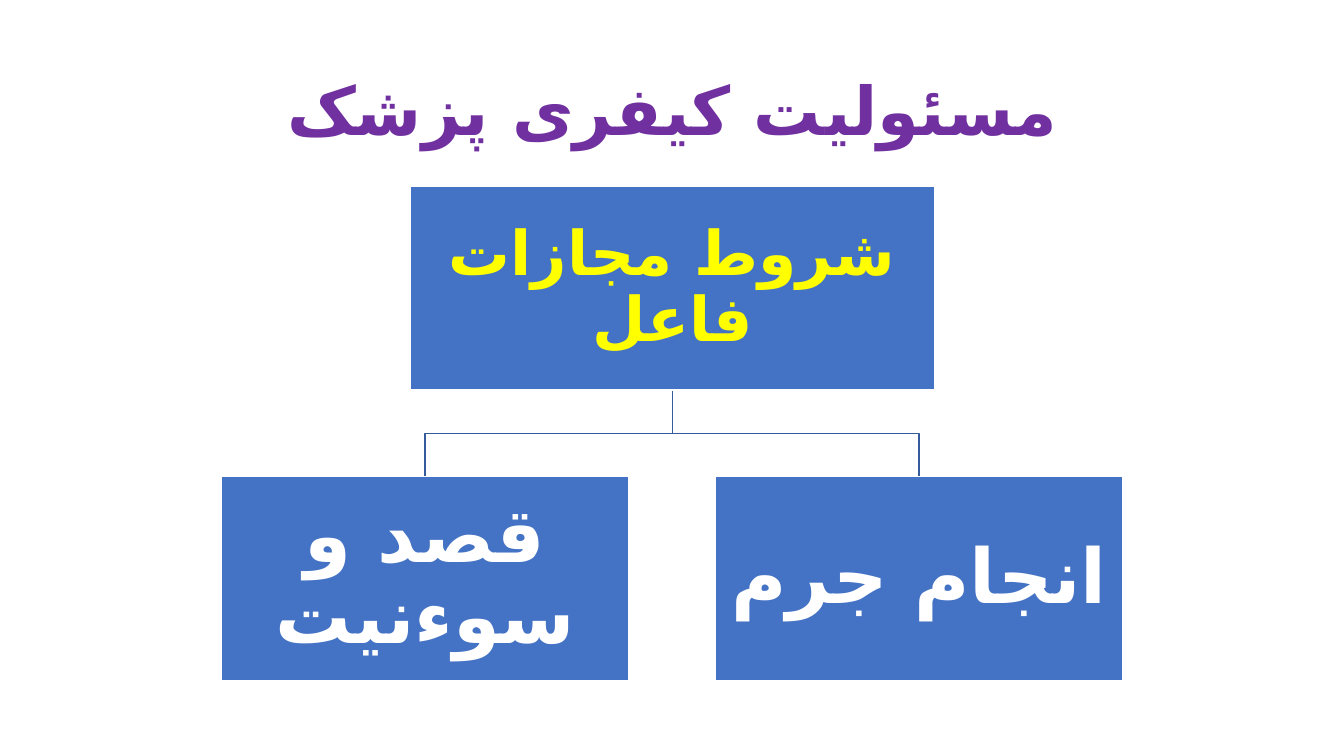
"""Build a slide with a two-branch hierarchy on a physician's criminal liability."""
from dataclasses import dataclass

from lxml import etree
from pptx import Presentation
from pptx.dml.color import RGBColor
from pptx.enum.shapes import MSO_SHAPE
from pptx.enum.text import MSO_ANCHOR, PP_ALIGN
from pptx.oxml.ns import qn
from pptx.util import Inches, Pt

RECTANGLE = MSO_SHAPE.RECTANGLE
MIDDLE = MSO_ANCHOR.MIDDLE
CENTER = PP_ALIGN.CENTER

FONT, PERSIAN_FONT = "Calibri", "DejaVu Sans"
PURPLE, YELLOW, WHITE = "7030A0", "FFFF00", "FFFFFF"
BOX_FILL, BRANCH_LINE = "4472C4", "365B9D"


@dataclass(frozen=True)
class Node:
    text: str
    left: float
    top: float
    width: float
    size: int
    color: str
    inset: float
    height: float = 2.02

    @property
    def center(self) -> float:
        return self.left + self.width / 2

    @property
    def bottom(self) -> float:
        return self.top + self.height


CONDITIONS = Node("شروط مجازات فاعل", 4.07, 1.85, 5.2, 44, YELLOW, 0.03)
ELEMENTS = [
    Node(text, 2.19 + column * 4.9, 4.73, 4.05, 54, WHITE, 0.04)
    for column, text in enumerate(["قصد و سوءنیت", "انجام جرم"])
]


def rgb(color: str) -> RGBColor:
    return RGBColor.from_string(color)


def write(shape, text: str, size: int, color: str) -> None:
    frame = shape.text_frame
    frame.word_wrap = True
    frame.vertical_anchor = MIDDLE
    frame.text = text
    paragraph = frame.paragraphs[0]
    paragraph.alignment = CENTER
    paragraph.line_spacing = 0.9
    paragraph._p.get_or_add_pPr().set("rtl", "1")
    font = paragraph.runs[0].font
    font.name = FONT
    font.size = Pt(size)
    font.bold = True
    font.color.rgb = rgb(color)
    complex_script = etree.SubElement(font._element, qn("a:cs"))
    complex_script.set("typeface", PERSIAN_FONT)


def outline(shape, color: str) -> None:
    shape.shadow.inherit = False
    shape.line.color.rgb = rgb(color)
    shape.line.width = Pt(1)


def draw_node(slide, node: Node) -> None:
    box = slide.shapes.add_shape(
        RECTANGLE, Inches(node.left), Inches(node.top),
        Inches(node.width), Inches(node.height),
    )
    box.fill.solid()
    box.fill.fore_color.rgb = rgb(BOX_FILL)
    outline(box, WHITE)
    write(box, node.text, node.size, node.color)
    frame = box.text_frame
    frame.margin_left = frame.margin_right = Inches(node.inset)
    frame.margin_top = frame.margin_bottom = Inches(node.inset)


def draw_branch(slide, parent: Node, child: Node) -> None:
    bend = (parent.bottom + child.top) / 2
    corners = [(parent.center, bend), (child.center, bend), (child.center, child.top)]
    builder = slide.shapes.build_freeform(
        Inches(parent.center), Inches(parent.bottom), scale=1.0
    )
    builder.add_line_segments([(Inches(x), Inches(y)) for x, y in corners], close=False)
    branch = builder.convert_to_shape()
    branch.fill.background()
    outline(branch, BRANCH_LINE)


def main() -> None:
    presentation = Presentation()
    presentation.slide_width = Inches(13.33)
    presentation.slide_height = Inches(7.5)
    slide = presentation.slides.add_slide(presentation.slide_layouts[6])

    title = slide.shapes.add_textbox(Inches(0.92), Inches(0.4), Inches(11.5), Inches(1.45))
    write(title, "مسئولیت کیفری پزشک", 48, PURPLE)

    for element in ELEMENTS:
        draw_branch(slide, CONDITIONS, element)
    for node in [CONDITIONS, *ELEMENTS]:
        draw_node(slide, node)

    presentation.save("out.pptx")


if __name__ == "__main__":
    main()
